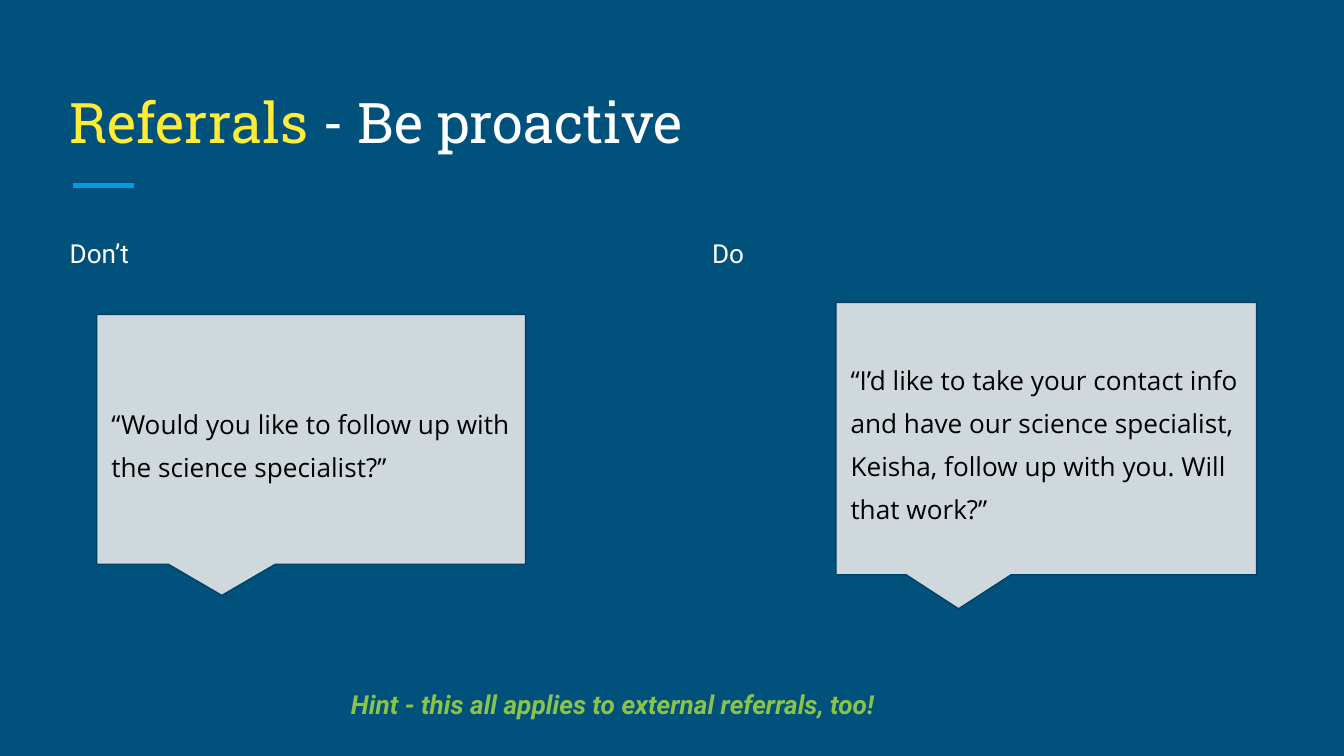
from dataclasses import dataclass

from lxml import etree
from pptx import Presentation
from pptx.dml.color import RGBColor
from pptx.enum.shapes import MSO_CONNECTOR
from pptx.enum.text import MSO_ANCHOR, MSO_AUTO_SIZE, PP_ALIGN
from pptx.oxml.ns import qn
from pptx.util import Inches, Pt

STRAIGHT = MSO_CONNECTOR.STRAIGHT
TOP, MIDDLE, BOTTOM = MSO_ANCHOR.TOP, MSO_ANCHOR.MIDDLE, MSO_ANCHOR.BOTTOM
GROW, FIXED = MSO_AUTO_SIZE.SHAPE_TO_FIT_TEXT, MSO_AUTO_SIZE.NONE
CENTER = PP_ALIGN.CENTER


@dataclass(frozen=True)
class Theme:
    background: str = "00517C"
    rule: str = "039BE5"
    highlight: str = "FFEB38"
    light: str = "FFFFFF"
    dark: str = "000000"
    bubble: str = "CFD8DC"
    outline: str = "004065"
    hint: str = "8BC34A"
    heading_font: str = "Roboto Slab"
    label_font: str = "Roboto"
    quote_font: str = "Open Sans"
    heading_size: int = 30
    text_size: int = 14


THEME = Theme()

# Content; bubbles and quotes are left, top, width, height in inches
TITLE = [("Referrals", THEME.highlight), (" - Be proactive", THEME.light)]
COLUMNS = [
    {"label": "Don’t",
     "quote": "“Would you like to follow up with the science specialist?”",
     "bubble": (0.72, 2.34, 3.19, 2.09), "quote_box": (0.73, 2.89, 3.18, 0.76)},
    {"label": "Do",
     "quote": "“I’d like to take your contact info and have our science specialist, "
              "Keisha, follow up with you. Will that work?”",
     "bubble": (6.22, 2.25, 3.13, 2.28), "quote_box": (6.23, 2.56, 3.12, 1.41)},
]
HINT = "Hint - this all applies to external referrals, too! "

# Layout
WIDTH = 10
HEIGHT = WIDTH * 9 / 16
MARGIN, CONTENT_W = 0.42, 9.15
COLUMN_W = 4.37
COLUMN_STEP = CONTENT_W - COLUMN_W
INSET = 0.1
# Bubble outline as shares of its width and height
BODY = 8 / 9
OUTLINE = [(0, 0), (1, 0), (1, BODY), (5 / 12, BODY), (7 / 24, 1), (1 / 6, BODY), (0, BODY)]


def rgb(color):
    return RGBColor.from_string(color)


def add_text(shapes, box, runs, font, size, anchor=TOP, auto_size=FIXED):
    """Add one paragraph of (text, colour) runs and return it."""
    tf = shapes.add_textbox(*map(Inches, box)).text_frame
    tf.word_wrap = True
    tf.auto_size = auto_size
    tf.vertical_anchor = anchor
    tf.margin_left = tf.margin_right = tf.margin_top = tf.margin_bottom = Inches(INSET)
    p = tf.paragraphs[0]
    p.font.name, p.font.size = font, Pt(size)
    for text, color in runs:
        r = p.add_run()
        r.text = text
        r.font.color.rgb = rgb(color)
    return p


def add_bubble(shapes, box):
    left, top, width, height = box
    points = [(Inches(left + x * width), Inches(top + y * height)) for x, y in OUTLINE]
    builder = shapes.build_freeform(*points[0])
    builder.add_line_segments(points[1:], close=True)
    sp = builder.convert_to_shape()
    sp.shadow.inherit = False
    sp.fill.solid()
    sp.fill.fore_color.rgb = rgb(THEME.bubble)
    sp.line.color.rgb = rgb(THEME.outline)
    sp.line.width = Pt(0.75)


def add_rule(shapes, left, right, y):
    line = shapes.add_connector(STRAIGHT, Inches(left), Inches(y), Inches(right), Inches(y))
    line.line.color.rgb = rgb(THEME.rule)
    line.line.width = Pt(3)
    etree.SubElement(line._element.spPr, qn("a:effectLst"))


def add_column(s, index, column):
    left = MARGIN + index * COLUMN_STEP
    p = add_text(s.shapes, (left, 1.63, COLUMN_W, 3.37), [(column["label"], THEME.light)],
                 THEME.label_font, THEME.text_size)
    p.line_spacing, p.space_before = 1.15, Pt(12)

    group = s.shapes.add_group_shape()
    add_bubble(group.shapes, column["bubble"])
    p = add_text(group.shapes, column["quote_box"], [(column["quote"], THEME.dark)],
                 THEME.quote_font, THEME.text_size, MIDDLE, GROW)
    p.line_spacing, p.space_before = 1.37, Pt(6)


def main():
    prs = Presentation()
    prs.slide_width, prs.slide_height = Inches(WIDTH), Inches(HEIGHT)
    s = prs.slides.add_slide(prs.slide_layouts[6])
    s.background.fill.solid()
    s.background.fill.fore_color.rgb = rgb(THEME.background)

    add_rule(s.shapes, 0.54, 1, 1.38)
    add_text(s.shapes, (MARGIN, 0.5, CONTENT_W, 0.75), TITLE,
             THEME.heading_font, THEME.heading_size, BOTTOM)
    for index, column in enumerate(COLUMNS):
        add_column(s, index, column)

    p = add_text(s.shapes, (1.4, 5.02, 6.37, 0.44), [(HINT, THEME.hint)],
                 THEME.label_font, THEME.text_size, auto_size=GROW)
    p.alignment = CENTER
    p.font.bold = p.font.italic = True

    prs.save("out.pptx")


if __name__ == "__main__":
    main()
